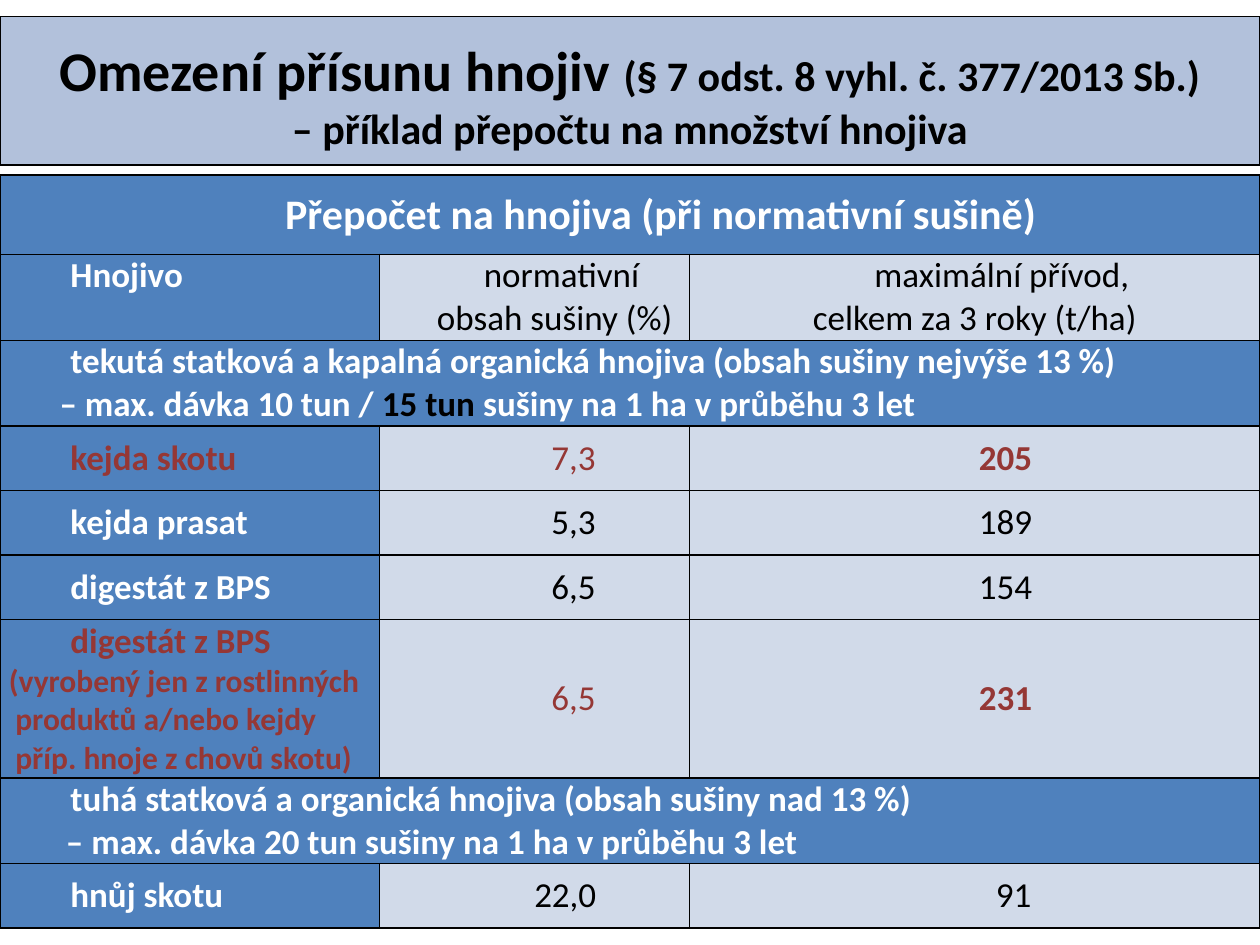
from lxml import etree
from pptx import Presentation
from pptx import util as u
from pptx.dml.color import RGBColor
from pptx.enum import text
from pptx.oxml import ns

FONT = "Calibri"
COLORS = {"black": "000000", "white": "FFFFFF", "red": "953735",
          "banner": "B2C1DB", "blue": "4F81BD", "pale": "D1DAE9"}

TITLE = [
    [("Omezení přísunu hnojiv ", 32), ("(§ 7 odst. 8 vyhl. č. 377/2013 Sb.)", 24)],
    [("– příklad přepočtu na množství hnojiva", 24)],
]

# A line is (first-line indent in cm, runs); a run is (text, size, colour, bold).
INDENT, WIDE = 1.24, 1.57


def white(words, size=20):
    return (words, size, "white", True)


def plain(words):
    return (words, 20, "black", False)


def red(words, size=20, bold=True):
    return (words, size, "red", bold)


def values(name, dry, limit, emphasis=False):
    """One fertiliser row; an emphasised one is red with a bold limit."""
    label, dry_run, limit_run = (
        (red(name), red(dry, bold=False), red(limit)) if emphasis
        else (white(name), plain(dry), plain(limit)))
    return [[(INDENT, [label])],
            [(WIDE if len(dry) < 4 else INDENT, [dry_run])],
            [(WIDE if len(limit) < 3 else INDENT, [limit_run])]]


digestate = values("digestát z BPS", "6,5", "231", True)
digestate[0] += [
    (0, [red("(vyrobený jen z rostlinných", 18)]),
    (0.13, [red("produktů a/nebo kejdy", 18)]),
    (0.13, [red("příp. hnoje z chovů skotu)", 18)]),
]

# (row height in cm, anchored in the middle, cells); a single cell spans the row.
ROWS = [
    (1.6, True, [[(INDENT, [white("Přepočet na hnojiva (při normativní sušině)", 24)])]]),
    (1.73, False, [
        [(INDENT, [white("Hnojivo")])],
        [(1.09, [plain("normativní")]), (0.81, [plain("obsah sušiny (%)")])],
        [(1.09, [plain("maximální přívod,")]), (0, [plain("celkem za 3 roky (t/ha)")])],
    ]),
    (1.73, False, [[
        (INDENT, [white("tekutá statková a kapalná organická hnojiva (obsah sušiny nejvýše 13 %)")]),
        (1.02, [white("– max. dávka 10 tun / "), ("15 tun ", 20, "black", True),
                white("sušiny na 1 ha v průběhu 3 let")]),
    ]]),
    (1.3, True, values("kejda skotu", "7,3", "205", True)),
    (1.3, True, values("kejda prasat", "5,3", "189")),
    (1.3, True, values("digestát z BPS", "6,5", "154")),
    (3.18, True, digestate),
    (1.73, False, [[
        (INDENT, [white("tuhá statková a organická hnojiva (obsah sušiny nad 13 %)")]),
        (1.15, [white("– max. dávka 20 tun sušiny na 1 ha v průběhu 3 let")]),
    ]]),
    (1.3, True, values("hnůj skotu", "22,0", "91")),
]
COLUMNS = [7.65, 6.25, 11.5]


def paint(fill, color):
    fill.solid()
    fill.fore_color.rgb = RGBColor.from_string(COLORS[color])


def add_span(para, words, size, color, bold):
    span = para.add_run()
    span.text = words
    span.font.name = FONT
    span.font.size = u.Pt(size)
    span.font.bold = bold
    span.font.color.rgb = RGBColor.from_string(COLORS[color])


def add_borders(cell):
    properties = cell._tc.get_or_add_tcPr()
    for side in ("a:lnL", "a:lnR", "a:lnT", "a:lnB"):
        line = etree.SubElement(properties, ns.qn(side), w=str(u.Pt(1)))
        solid = etree.SubElement(line, ns.qn("a:solidFill"))
        etree.SubElement(solid, ns.qn("a:srgbClr"), val=COLORS["black"])


def fill_cell(cell, lines, middle, centered):
    cell.margin_left = cell.margin_right = u.Cm(0.18)
    cell.margin_top = cell.margin_bottom = 0
    cell.vertical_anchor = text.MSO_ANCHOR.MIDDLE if middle else text.MSO_ANCHOR.TOP
    frame = cell.text_frame
    for number, (indent, runs) in enumerate(lines):
        para = frame.add_paragraph() if number else frame.paragraphs[0]
        para.alignment = text.PP_ALIGN.CENTER if centered else text.PP_ALIGN.LEFT
        properties = para._p.get_or_add_pPr()
        properties.set("marL", "0")
        properties.set("indent", str(u.Cm(indent)))
        for run in runs:
            add_span(para, *run)


def add_title(page):
    box = page.shapes.title
    box.left, box.top, box.width, box.height = 0, u.Cm(0.33), u.Cm(25.4), u.Cm(3)
    paint(box.fill, "banner")
    paint(box.line.fill, "black")
    box.line.width = u.Pt(0.75)
    frame = box.text_frame
    frame.word_wrap = True
    frame.auto_size = text.MSO_AUTO_SIZE.NONE
    frame.vertical_anchor = text.MSO_ANCHOR.MIDDLE
    frame.margin_top, frame.margin_bottom = u.Cm(0.25), u.Cm(0.1)
    para = frame.paragraphs[0]
    para.alignment = text.PP_ALIGN.CENTER
    for number, runs in enumerate(TITLE):
        if number:
            para.add_line_break()
        for words, size in runs:
            add_span(para, words, size, "black", True)


def add_limits(page):
    height = sum(row[0] for row in ROWS)
    table = page.shapes.add_table(len(ROWS), len(COLUMNS), 0, u.Cm(3.53),
                                  u.Cm(sum(COLUMNS)), u.Cm(height)).table
    table.first_row = table.horz_banding = False
    for column, width in zip(table.columns, COLUMNS):
        column.width = u.Cm(width)
    for r, (height, middle, cells) in enumerate(ROWS):
        table.rows[r].height = u.Cm(height)
        spans = len(cells) == 1
        for c in range(len(COLUMNS)):
            cell = table.cell(r, c)
            add_borders(cell)
            paint(cell.fill, "blue" if spans or c == 0 else "pale")
        if spans:
            table.cell(r, 0).merge(table.cell(r, len(COLUMNS) - 1))
        for c, lines in enumerate(cells):
            fill_cell(table.cell(r, c), lines, middle, centered=c > 0 or r == 0)


def main():
    deck = Presentation()
    deck.slide_width, deck.slide_height = u.Cm(25.4), u.Cm(19.05)
    page = deck.slides.add_slide(deck.slide_layouts.get_by_name("Title Only"))
    add_title(page)
    add_limits(page)
    deck.save("out.pptx")


if __name__ == "__main__":
    main()
